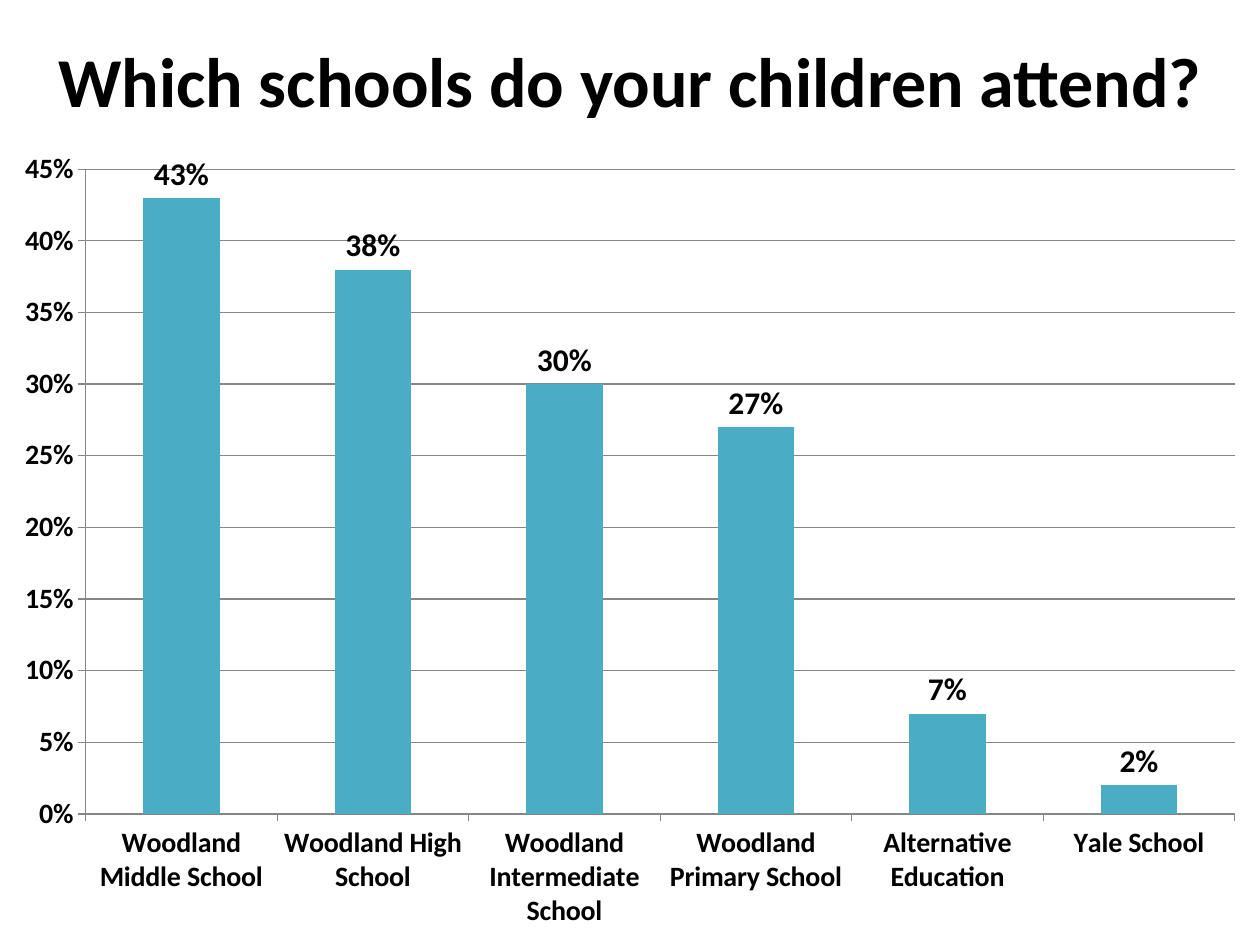
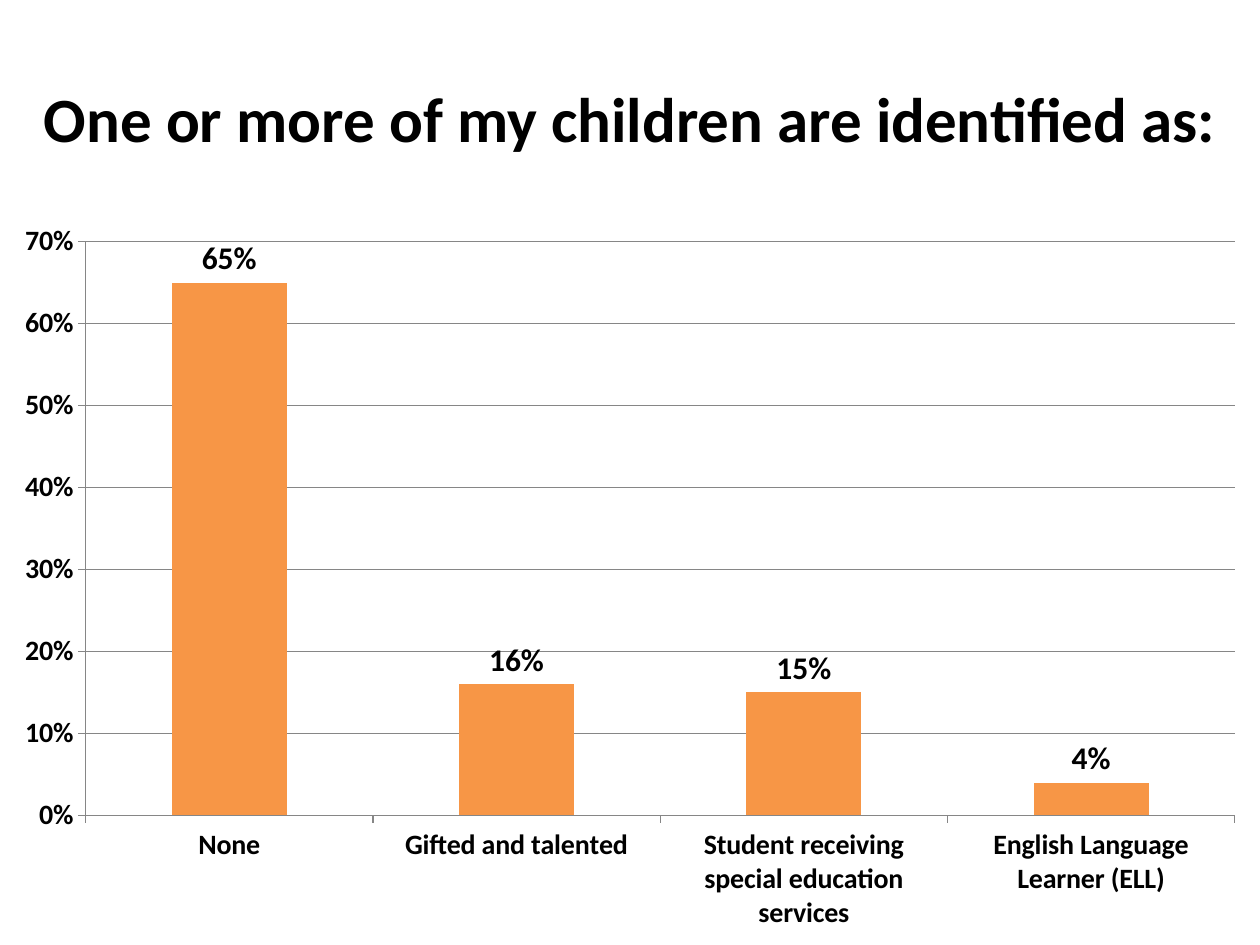
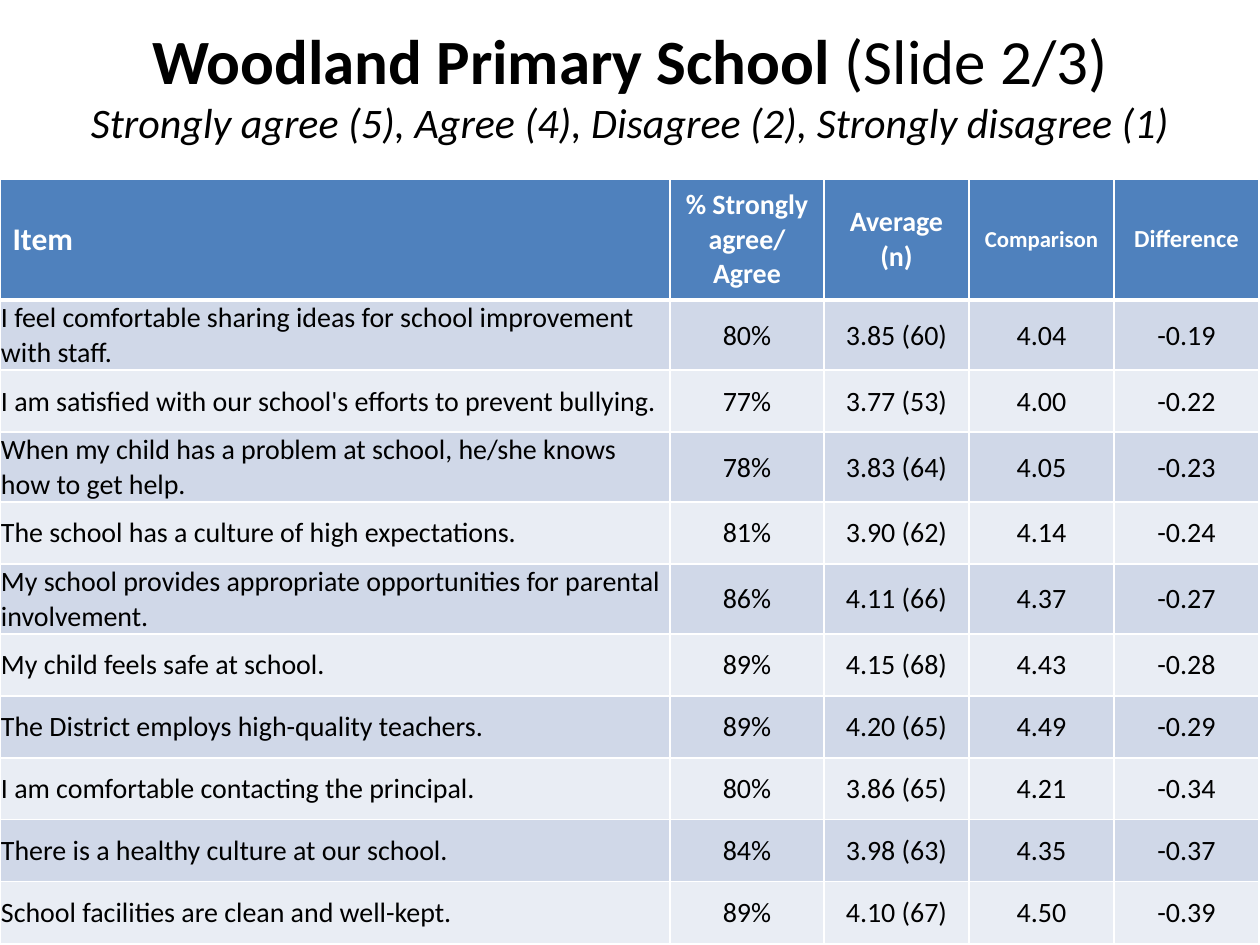
import pptx
import pptx.chart.data
import pptx.dml.color
import pptx.enum.chart
import pptx.enum.text
import pptx.oxml
import pptx.oxml.ns
import pptx.util

PIXELS_PER_INCH = 126
SLIDE_WIDTH = 1260
SLIDE_HEIGHT = 945
FONT = "Calibri"
BLACK = pptx.dml.color.RGBColor(0x00, 0x00, 0x00)
WHITE = pptx.dml.color.RGBColor(0xFF, 0xFF, 0xFF)
GRID_GRAY = pptx.dml.color.RGBColor(0x86, 0x86, 0x86)
TEAL = pptx.dml.color.RGBColor(0x4B, 0xAC, 0xC6)
ORANGE = pptx.dml.color.RGBColor(0xF7, 0x96, 0x46)
HEADER_BLUE = pptx.dml.color.RGBColor(0x4F, 0x81, 0xBD)
ROW_COLORS = (
    pptx.dml.color.RGBColor(0xD0, 0xD8, 0xE8),
    pptx.dml.color.RGBColor(0xE9, 0xED, 0xF4),
)
CENTER = pptx.enum.text.PP_ALIGN.CENTER
LEFT = pptx.enum.text.PP_ALIGN.LEFT
MIDDLE = pptx.enum.text.MSO_ANCHOR.MIDDLE

SCHOOLS = {
    "Woodland Middle School": 0.43,
    "Woodland High School": 0.38,
    "Woodland Intermediate School": 0.30,
    "Woodland Primary School": 0.27,
    "Alternative Education": 0.07,
    "Yale School": 0.02,
}
IDENTIFICATIONS = {
    "None": 0.65,
    "Gifted and talented": 0.16,
    "Student receiving special education services": 0.15,
    "English Language Learner (ELL)": 0.04,
}
COLUMN_WIDTHS = (670, 154, 145, 145, 145)
HEADER_HEIGHT = 121
ONE_LINE_HEIGHT = 62
TWO_LINE_HEIGHT = 70
TWO_LINE_LENGTH = 65
HEADERS = (
    ("Item", 18),
    ("% Strongly agree/ Agree", 16),
    ("Average (n)", 16),
    ("Comparison", 13),
    ("Difference", 14),
)
SURVEY_ROWS = (
    ("I feel comfortable sharing ideas for school improvement with staff.", "80%", "3.85 (60)", "4.04", "-0.19"),
    ("I am satisfied with our school's efforts to prevent bullying.", "77%", "3.77 (53)", "4.00", "-0.22"),
    ("When my child has a problem at school, he/she knows how to get help.", "78%", "3.83 (64)", "4.05", "-0.23"),
    ("The school has a culture of high expectations.", "81%", "3.90 (62)", "4.14", "-0.24"),
    ("My school provides appropriate opportunities for parental involvement.", "86%", "4.11 (66)", "4.37", "-0.27"),
    ("My child feels safe at school.", "89%", "4.15 (68)", "4.43", "-0.28"),
    ("The District employs high-quality teachers.", "89%", "4.20 (65)", "4.49", "-0.29"),
    ("I am comfortable contacting the principal.", "80%", "3.86 (65)", "4.21", "-0.34"),
    ("There is a healthy culture at our school.", "84%", "3.98 (63)", "4.35", "-0.37"),
    ("School facilities are clean and well-kept.", "89%", "4.10 (67)", "4.50", "-0.39"),
)


def px(length):
    return pptx.util.Emu(round(length * 914400 / PIXELS_PER_INCH))


def set_font(font, size, color=BLACK, bold=False):
    font.name = FONT
    font.size = pptx.util.Pt(size)
    font.color.rgb = color
    font.bold = bold


def add_slide(presentation):
    return presentation.slides.add_slide(presentation.slide_layouts[6])


def add_title_paragraph(slide, top, height):
    frame = slide.shapes.add_textbox(0, px(top), px(SLIDE_WIDTH), px(height)).text_frame
    frame.word_wrap = True
    frame.vertical_anchor = MIDDLE
    paragraph = frame.paragraphs[0]
    paragraph.alignment = CENTER
    return paragraph


def add_title(slide, text, top, size):
    paragraph = add_title_paragraph(slide, top, 158)
    paragraph.text = text
    set_font(paragraph.font, size, bold=True)


def add_survey_title(slide, school, part, scale):
    paragraph = add_title_paragraph(slide, 0, 168)
    for text, size, bold in ((school, 36, True), (part, 36, False)):
        run = paragraph.add_run()
        run.text = text
        set_font(run.font, size, bold=bold)
    paragraph.add_line_break()
    run = paragraph.add_run()
    run.text = scale
    set_font(run.font, 24)
    run.font.italic = True


def style_line(line):
    line.color.rgb = GRID_GRAY
    line.width = pptx.util.Pt(0.75)


def add_percent_chart(slide, shares, top, color, maximum, step):
    chart_data = pptx.chart.data.CategoryChartData(number_format="0%")
    chart_data.categories = list(shares)
    chart_data.add_series("Series 1", list(shares.values()))
    chart = slide.shapes.add_chart(
        pptx.enum.chart.XL_CHART_TYPE.COLUMN_CLUSTERED,
        0, px(top), px(SLIDE_WIDTH), px(SLIDE_HEIGHT - top), chart_data,
    ).chart
    chart.has_legend = False
    chart.has_title = False
    set_font(chart.font, 18)

    for axis in (chart.category_axis, chart.value_axis):
        set_font(axis.tick_labels.font, 16, bold=True)
        axis.major_tick_mark = pptx.enum.chart.XL_TICK_MARK.OUTSIDE
        axis.minor_tick_mark = pptx.enum.chart.XL_TICK_MARK.NONE
        style_line(axis.format.line)
    value_axis = chart.value_axis
    value_axis.minimum_scale = 0
    value_axis.maximum_scale = maximum
    value_axis.major_unit = step
    value_axis.tick_labels.number_format = "0%"
    value_axis.tick_labels.number_format_is_linked = False
    value_axis.has_major_gridlines = True
    style_line(value_axis.major_gridlines.format.line)

    plot = chart.plots[0]
    plot.gap_width = 150
    plot.vary_by_categories = False
    series = plot.series[0]
    series.format.fill.solid()
    series.format.fill.fore_color.rgb = color
    labels = series.data_labels
    labels.show_value = True
    labels.number_format = "0%"
    labels.number_format_is_linked = False
    labels.position = pptx.enum.chart.XL_LABEL_POSITION.OUTSIDE_END
    set_font(labels.font, 18, bold=True)


def set_borders(cell, top=1, bottom=1):
    properties = cell._tc.get_or_add_tcPr()
    widths = {"lnL": 1, "lnR": 1, "lnT": top, "lnB": bottom}
    for index, (side, width) in enumerate(widths.items()):
        border = pptx.oxml.parse_xml(
            f'<a:{side} {pptx.oxml.ns.nsdecls("a")} w="{pptx.util.Pt(width)}">'
            f'<a:solidFill><a:srgbClr val="{WHITE}"/></a:solidFill></a:{side}>'
        )
        properties.insert(index, border)


def fill_cell(cell, text, size, color, background, alignment, bold=False):
    cell.fill.solid()
    cell.fill.fore_color.rgb = background
    cell.vertical_anchor = MIDDLE
    paragraph = cell.text_frame.paragraphs[0]
    paragraph.text = text
    paragraph.alignment = alignment
    set_font(paragraph.font, size, color, bold)


def add_survey_table(slide, top):
    heights = [HEADER_HEIGHT] + [
        TWO_LINE_HEIGHT if len(row[0]) > TWO_LINE_LENGTH else ONE_LINE_HEIGHT
        for row in SURVEY_ROWS
    ]
    table = slide.shapes.add_table(
        len(heights), len(COLUMN_WIDTHS),
        0, px(top), px(sum(COLUMN_WIDTHS)), px(sum(heights)),
    ).table
    for column, width in zip(table.columns, COLUMN_WIDTHS):
        column.width = px(width)
    for table_row, height in zip(table.rows, heights):
        table_row.height = px(height)

    for column_index, (text, size) in enumerate(HEADERS):
        cell = table.cell(0, column_index)
        alignment = CENTER if column_index else LEFT
        fill_cell(cell, text, size, WHITE, HEADER_BLUE, alignment, bold=True)
        set_borders(cell, bottom=3)

    for row_index, row in enumerate(SURVEY_ROWS):
        for column_index, text in enumerate(row):
            cell = table.cell(row_index + 1, column_index)
            alignment = CENTER if column_index else LEFT
            fill_cell(cell, text, 16, BLACK, ROW_COLORS[row_index % 2], alignment)
            cell.margin_left = cell.margin_right = cell.margin_top = px(1)
            cell.margin_bottom = 0
            set_borders(cell, top=1 if row_index else 3)


def main():
    presentation = pptx.Presentation()
    presentation.slide_width = px(SLIDE_WIDTH)
    presentation.slide_height = px(SLIDE_HEIGHT)

    slide = add_slide(presentation)
    add_title(slide, "Which schools do your children attend?", 0, 40)
    add_percent_chart(slide, SCHOOLS, 136, TEAL, 0.45, 0.05)

    slide = add_slide(presentation)
    add_title(slide, "One or more of my children are identified as:", 38, 36)
    add_percent_chart(slide, IDENTIFICATIONS, 210, ORANGE, 0.7, 0.1)

    slide = add_slide(presentation)
    add_survey_title(
        slide,
        "Woodland Primary School ",
        "(Slide 2/3)",
        "Strongly agree (5), Agree (4), Disagree (2), Strongly disagree (1)",
    )
    add_survey_table(slide, 179)

    presentation.save("out.pptx")


if __name__ == "__main__":
    main()
